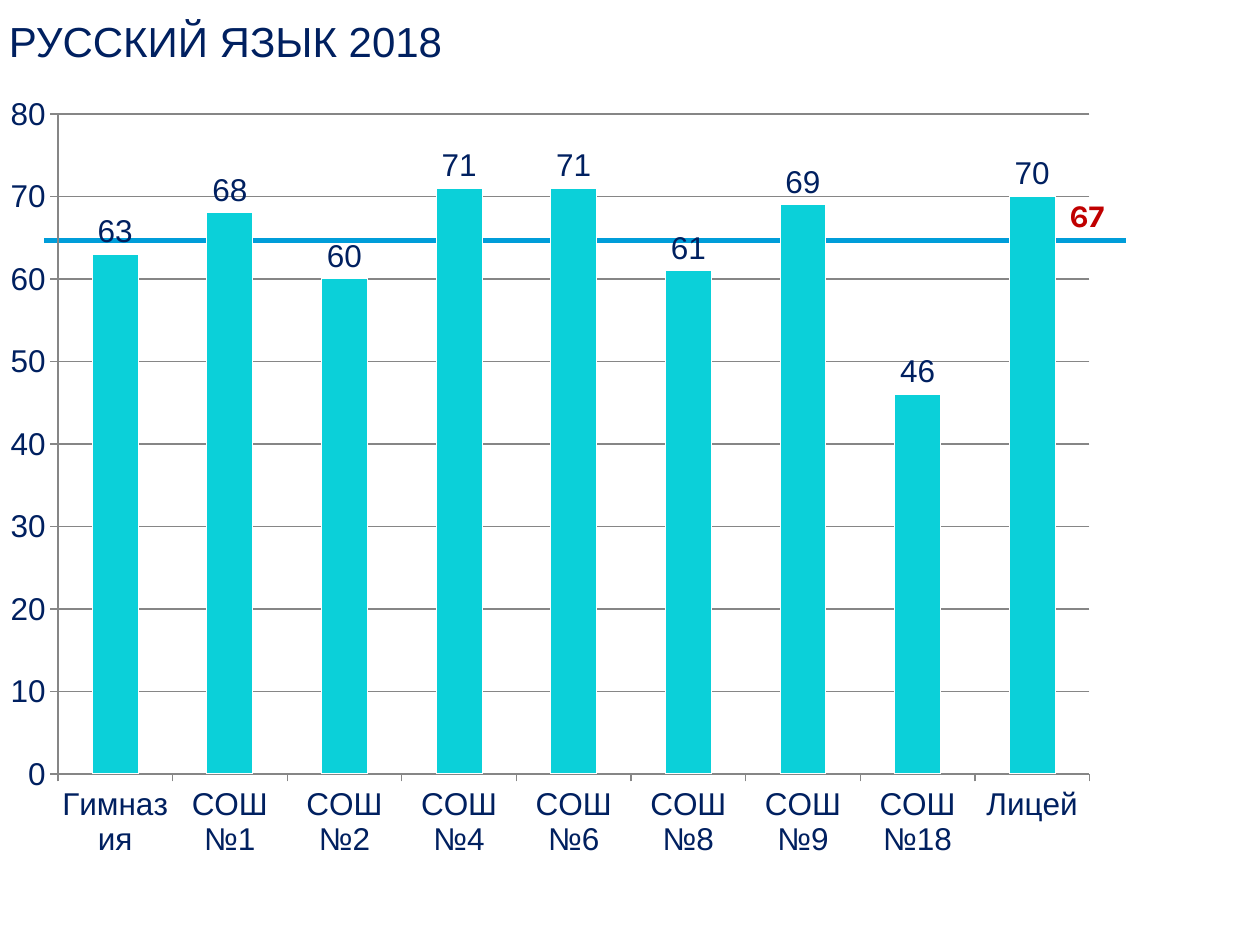
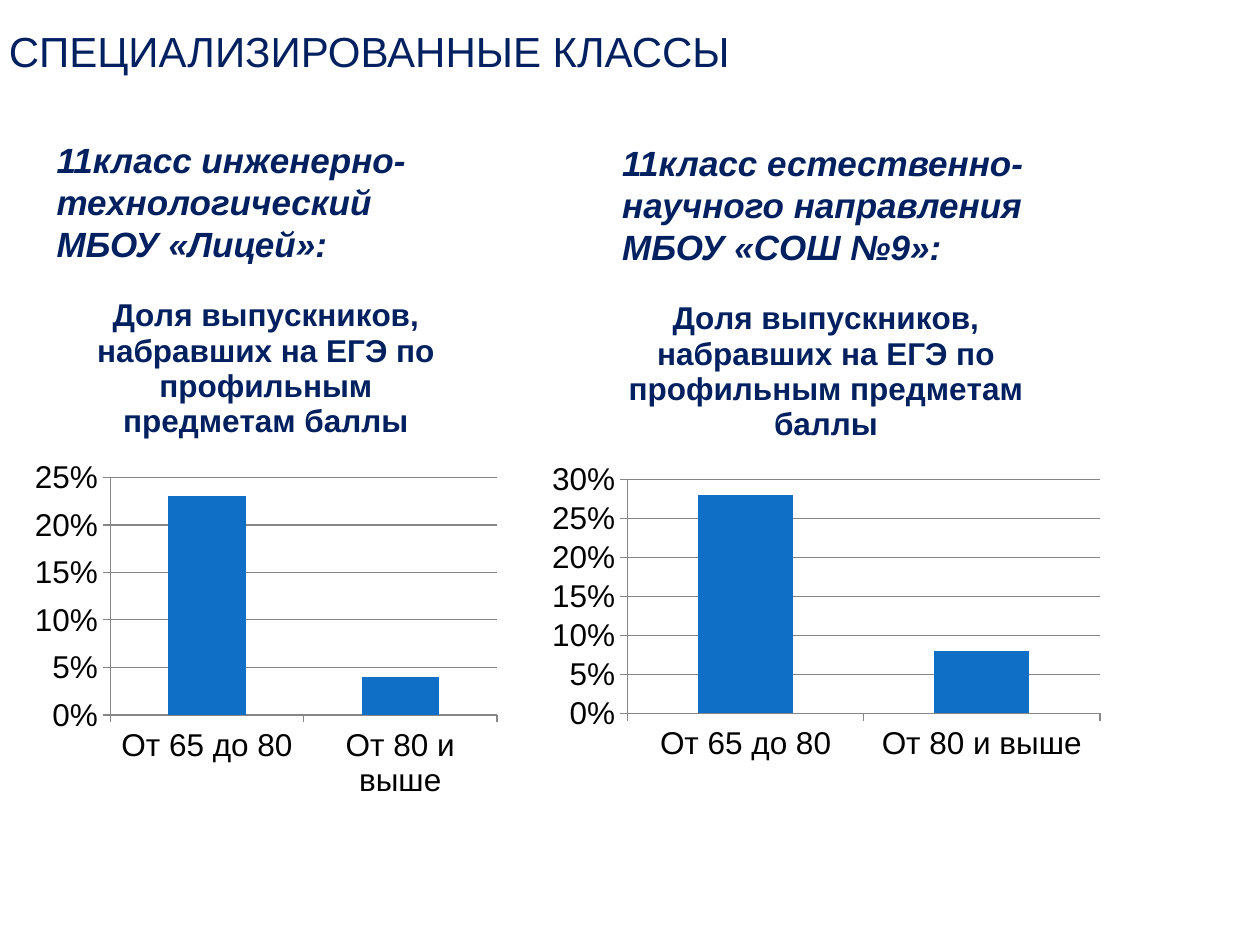
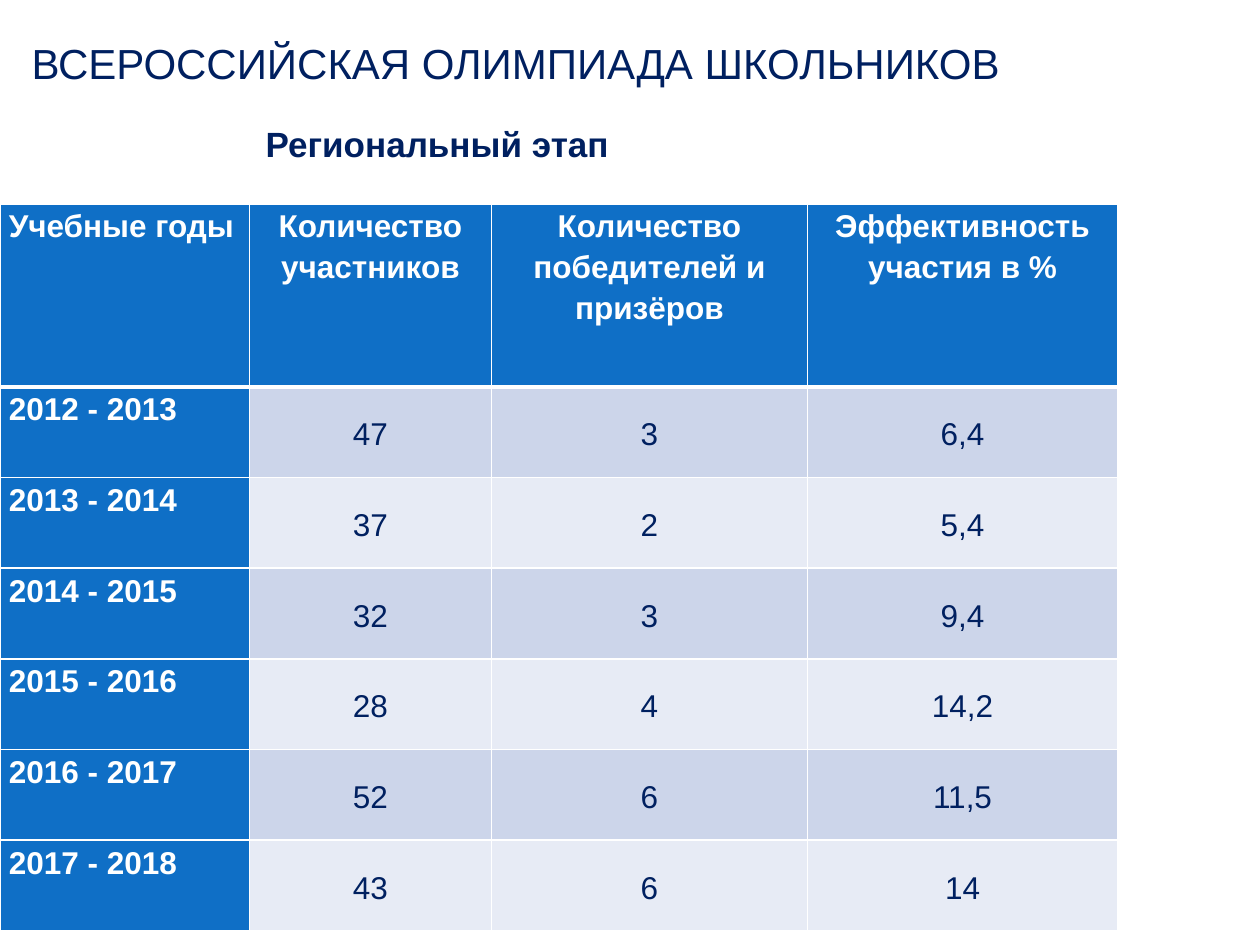
"""Build three slides on school exam results and olympiad participation."""
from lxml import etree
from pptx import Presentation
from pptx import util as u
from pptx.chart import data as chart_data
from pptx.dml.color import RGBColor
from pptx.enum import chart as charts, shapes, text
from pptx.oxml import ns

NAVY = RGBColor(0x00, 0x20, 0x60)
BLUE = RGBColor(0x0F, 0x6F, 0xC6)
CYAN = RGBColor(0x0B, 0xD0, 0xD9)
SKY = RGBColor(0x00, 0x9D, 0xD9)
RED = RGBColor(0xC0, 0x00, 0x00)
BLACK = RGBColor(0x00, 0x00, 0x00)
GRAY = RGBColor(0x86, 0x86, 0x86)
WHITE = RGBColor(0xFF, 0xFF, 0xFF)
BANDS = (RGBColor(0xCC, 0xD5, 0xEA), RGBColor(0xE7, 0xEB, 0xF5))
COLUMNS, ROWS = 100, 75
FONT = "Arial"
ALIGN = text.PP_ALIGN
ANCHOR = text.MSO_ANCHOR


class Deck:
    """Holds the style, the grid and the current slide."""

    def __init__(self):
        self.presentation = Presentation()
        self.presentation.slide_width = u.Inches(10)
        self.presentation.slide_height = u.Inches(7.5)
        self.slide = None

    def x(self, columns):
        return round(self.presentation.slide_width * columns / COLUMNS)

    def y(self, rows):
        return round(self.presentation.slide_height * rows / ROWS)

    def box(self, left, top, width, height):
        return self.x(left), self.y(top), self.x(width), self.y(height)

    def style(self, font, size, color=NAVY, bold=False, italic=False, name=FONT):
        font.name, font.size = name, u.Pt(size)
        font.bold, font.italic = bold, italic
        font.color.rgb = color

    def add_slide(self, title, area):
        layout = self.presentation.slide_layouts.get_by_name("Title Only")
        self.slide = self.presentation.slides.add_slide(layout)
        shape = self.slide.shapes.title
        shape.left, shape.top, shape.width, shape.height = self.box(*area)
        frame = shape.text_frame
        frame.text = title
        frame.auto_size = text.MSO_AUTO_SIZE.NONE
        frame.vertical_anchor = ANCHOR.BOTTOM
        frame.margin_left = frame.margin_right = u.Inches(0.05)
        frame.margin_top = frame.margin_bottom = 0
        frame.paragraphs[0].alignment = ALIGN.LEFT
        self.style(frame.paragraphs[0].font, 24)

    def add_text(self, lines, area, size, **look):
        frame = self.slide.shapes.add_textbox(*self.box(*area)).text_frame
        frame.word_wrap = True
        frame.text = "\n".join(lines)
        for paragraph in frame.paragraphs:
            self.style(paragraph.font, size, **look)

    def add_level(self, left, right, top):
        line = self.slide.shapes.add_connector(
            shapes.MSO_CONNECTOR.STRAIGHT,
            self.x(left), self.y(top), self.x(right), self.y(top))
        line.line.color.rgb, line.line.width = SKY, u.Pt(2.5)
        etree.SubElement(line._element.spPr, ns.qn("a:effectLst"))

    def add_columns(self, values, area, maximum, step, color=BLUE,
                    axis_color=BLACK, number_format="General", title=None):
        source = chart_data.CategoryChartData(number_format=number_format)
        source.categories = list(values)
        source.add_series("Series 1", list(values.values()))
        chart = self.slide.shapes.add_chart(
            charts.XL_CHART_TYPE.COLUMN_CLUSTERED, *self.box(*area), source).chart
        chart.has_legend = False
        self.style(chart.font, 18, axis_color)
        chart.has_title = title is not None
        if title:
            frame = chart.chart_title.text_frame
            frame.text = title
            self.style(frame.paragraphs[0].runs[0].font, 18, bold=True)
            chart.chart_title.include_in_layout = False
        for axis in (chart.category_axis, chart.value_axis):
            axis.major_tick_mark = charts.XL_TICK_MARK.OUTSIDE
            axis.format.line.color.rgb = GRAY
            self.style(axis.tick_labels.font, 18, axis_color)
        axis = chart.value_axis
        axis.minimum_scale, axis.maximum_scale, axis.major_unit = 0, maximum, step
        axis.major_gridlines.format.line.color.rgb = GRAY
        axis.tick_labels.number_format = number_format
        axis.tick_labels.number_format_is_linked = False
        plot = chart.plots[0]
        plot.gap_width, plot.vary_by_categories = 150, False
        plot.series[0].format.fill.solid()
        plot.series[0].format.fill.fore_color.rgb = color
        return chart

    def label_bars(self, chart):
        plot = chart.plots[0]
        plot.has_data_labels = True
        labels = plot.data_labels
        labels.show_value = True
        labels.position = charts.XL_LABEL_POSITION.OUTSIDE_END
        self.style(labels.font, 18)
        plot.series[0].format.line.color.rgb = WHITE

    def place_plot(self, chart, **area):
        plot_area = chart._chartSpace.chart.plotArea
        for old in plot_area.findall(ns.qn("c:layout")):
            plot_area.remove(old)
        layout = etree.Element(ns.qn("c:layout"))
        manual = etree.SubElement(layout, ns.qn("c:manualLayout"))
        settings = {"layoutTarget": "inner", "xMode": "edge", "yMode": "edge", **area}
        for tag, value in settings.items():
            etree.SubElement(manual, ns.qn("c:" + tag)).set("val", str(value))
        plot_area.insert(0, layout)

    def add_border(self, cell, side, points):
        line = etree.SubElement(cell._tc.get_or_add_tcPr(), ns.qn("a:ln" + side))
        line.set("w", str(u.Pt(points)))
        fill = etree.SubElement(line, ns.qn("a:solidFill"))
        etree.SubElement(fill, ns.qn("a:srgbClr")).set("val", str(WHITE))

    def add_table(self, records, left, top, widths, heights):
        table = self.slide.shapes.add_table(
            len(records), len(widths),
            *self.box(left, top, sum(widths), sum(heights))).table
        for column, width in zip(table.columns, widths):
            column.width = self.x(width)
        for row, height in zip(table.rows, heights):
            row.height = self.y(height)
        for row, record in enumerate(records):
            for column, value in enumerate(record):
                self.fill_cell(table.cell(row, column), value, row, column)

    def fill_cell(self, cell, value, row, column):
        heading = row == 0 or column == 0
        for side in "LRTB":
            thick = (side, row) in (("B", 0), ("T", 1))
            self.add_border(cell, side, 3 if thick else 1)
        cell.fill.solid()
        cell.fill.fore_color.rgb = BLUE if heading else BANDS[(row - 1) % 2]
        cell.margin_left = cell.margin_right = u.Inches(0.07)
        cell.margin_top = cell.margin_bottom = 0
        cell.vertical_anchor = ANCHOR.TOP if heading else ANCHOR.MIDDLE
        cell.text = value
        paragraph = cell.text_frame.paragraphs[0]
        paragraph.alignment = ALIGN.CENTER if column else ALIGN.JUSTIFY
        paragraph.line_spacing = 1.15
        self.style(paragraph.font, 18, WHITE if heading else NAVY, bold=heading)


SCORES = {
    "Гимназия": 63, "СОШ №1": 68, "СОШ №2": 60, "СОШ №4": 71, "СОШ №6": 71,
    "СОШ №8": 61, "СОШ №9": 69, "СОШ №18": 46, "Лицей": 70,
}
SHARE_TITLE = "Доля выпускников, набравших на ЕГЭ по профильным предметам баллы"
SHARE_LEVELS = ("От 65 до 80", "От 80 и выше")
CLASSES = (
    (("11класс инженерно-технологический", "МБОУ «Лицей»:"),
     (3.5, 10.5, 38.2, 11.1), (0.23, 0.04), (2, 21.5, 38.2, 42.7), 0.25),
    (("11класс естественно-научного направления", "МБОУ «СОШ №9»:"),
     (48.4, 10.7, 44.7, 11.1), (0.28, 0.08), (42.9, 21.8, 45.3, 39.4), 0.3),
)
OLYMPIAD = (
    ("Учебные годы", "Количество участников",
     "Количество победителей и призёров", "Эффективность участия в %"),
    ("2012 - 2013", "47", "3", "6,4"),
    ("2013 - 2014", "37", "2", "5,4"),
    ("2014 - 2015", "32", "3", "9,4"),
    ("2015 - 2016", "28", "4", "14,2"),
    ("2016 - 2017", "52", "6", "11,5"),
    ("2017 - 2018", "43", "6", "14"),
)


def main():
    deck = Deck()

    deck.add_slide("РУССКИЙ ЯЗЫК 2018", (0.2, 0.7, 99.8, 4.5))
    deck.add_level(3.5, 89.4, 19.1)
    chart = deck.add_columns(SCORES, (-0.2, 6.8, 88.9, 68.2), 80, 10,
                             color=CYAN, axis_color=NAVY)
    deck.label_bars(chart)
    deck.place_plot(chart, x=0.054, y=0.033, w=0.921, h=0.768)
    deck.add_text(["67"], (83.9, 15.1, 5.5, 4), 18, color=RED, bold=True, name="Karla")

    deck.add_slide("СПЕЦИАЛИЗИРОВАННЫЕ КЛАССЫ", (0.2, 0.7, 89.1, 5.3))
    for lines, text_area, shares, chart_area, maximum in CLASSES:
        deck.add_columns(dict(zip(SHARE_LEVELS, shares)), chart_area, maximum, 0.05,
                         number_format="0%", title=SHARE_TITLE)
        deck.add_text(lines, text_area, 20, bold=True, italic=True)

    deck.add_slide("ВСЕРОССИЙСКАЯ ОЛИМПИАДА ШКОЛЬНИКОВ", (2, 2.1, 79.2, 4.9))
    deck.add_text(["Региональный этап"], (20.1, 9.2, 58.3, 4.4), 20, bold=True)
    deck.add_table(OLYMPIAD, 0, 16.2, (19.8, 19.2, 25.1, 24.6), (14.5,) + (7.2,) * 6)

    deck.presentation.save("out.pptx")


if __name__ == "__main__":
    main()
